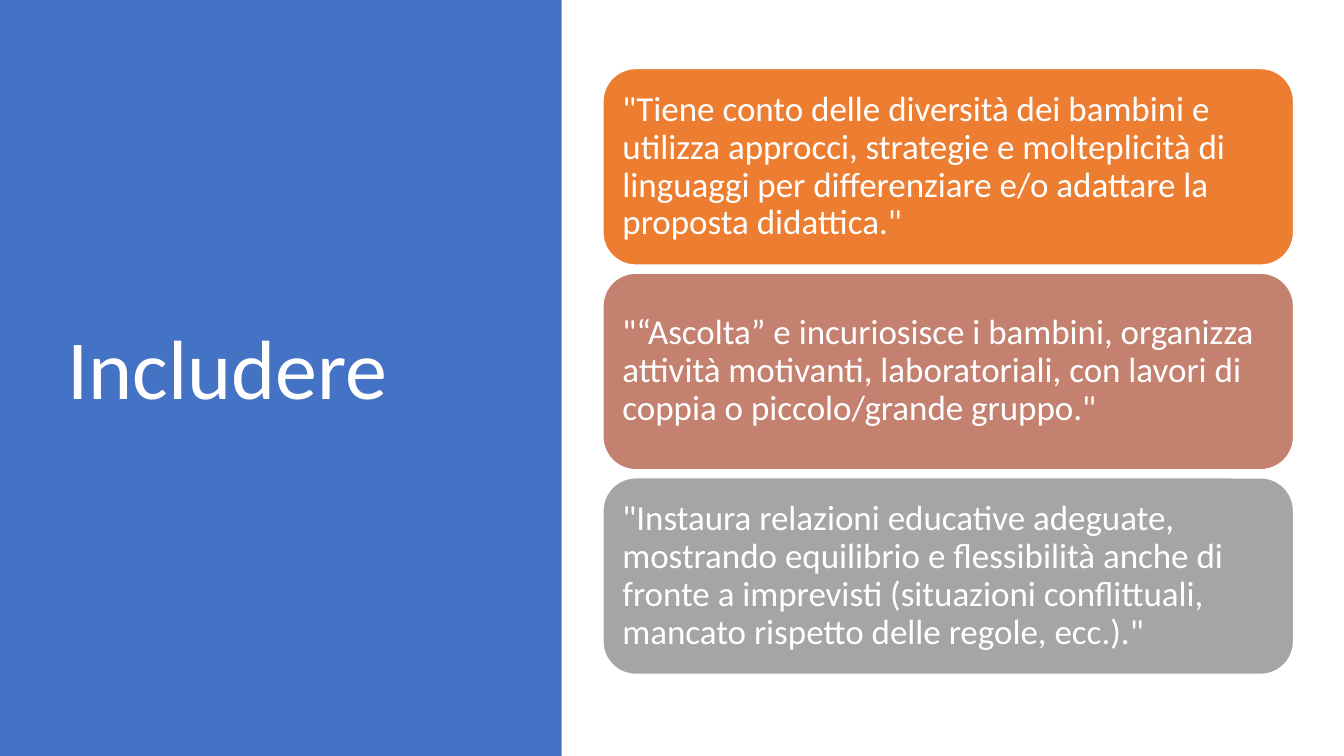
from dataclasses import dataclass

from pptx import Presentation
from pptx.dml.color import RGBColor
from pptx.enum.shapes import MSO_SHAPE
from pptx.enum.text import MSO_ANCHOR, MSO_AUTO_SIZE, PP_ALIGN
from pptx.util import Inches, Pt

TITLE = "Includere"
CARDS = [
    ("\"Tiene conto delle diversità dei bambini e utilizza approcci, strategie e "
     "molteplicità di linguaggi per differenziare e/o adattare la proposta didattica.\"", "ED7D31"),
    ("\"“Ascolta” e incuriosisce i bambini, organizza attività motivanti, "
     "laboratoriali, con lavori di coppia o piccolo/grande gruppo.\"", "C48170"),
    ("\"Instaura relazioni educative adeguate, mostrando equilibrio e flessibilità "
     "anche di fronte a imprevisti (situazioni conflittuali, mancato rispetto delle "
     "regole, ecc.).\"", "A5A5A5"),
]
SLIDE_W, SLIDE_H = 13.33, 7.5
PANEL_W = 5.57
TITLE_BOX = (0.57, 0.68, 4.16, 6.02)
CARD_X, CARD_Y, CARD_W, CARD_H, CARD_GAP = 5.98, 0.68, 6.85, 1.95, 0.08


@dataclass(frozen=True)
class Theme:
    font: str = "Calibri"
    panel: str = "4472C4"
    light: str = "FFFFFF"
    title_size: int = 60
    card_size: int = 25


THEME = Theme()


def rgb(code):
    return RGBColor.from_string(code)


def add_block(s, kind, box, fill):
    sp = s.shapes.add_shape(kind, *map(Inches, box))
    sp.shadow.inherit = False
    sp.fill.solid()
    sp.fill.fore_color.rgb = rgb(fill)
    sp.line.fill.background()
    return sp


def write(sp, text, size):
    tf = sp.text_frame
    tf.word_wrap = True
    tf.auto_size = MSO_AUTO_SIZE.NONE
    tf.vertical_anchor = MSO_ANCHOR.MIDDLE
    tf.margin_left = tf.margin_right = Inches(0.1)
    p = tf.paragraphs[0]
    p.alignment = PP_ALIGN.LEFT
    p.line_spacing = 0.9
    r = p.add_run()
    r.text = text
    r.font.name = THEME.font
    r.font.size = Pt(size)
    r.font.color.rgb = rgb(THEME.light)


def main():
    """Build the slide with its title panel and stacked cards."""
    prs = Presentation()
    prs.slide_width, prs.slide_height = Inches(SLIDE_W), Inches(SLIDE_H)
    s = prs.slides.add_slide(prs.slide_layouts[5])

    title = s.shapes.title
    title.left, title.top, title.width, title.height = map(Inches, TITLE_BOX)
    write(title, TITLE, THEME.title_size)
    panel = add_block(s, MSO_SHAPE.RECTANGLE, (0, 0, PANEL_W, SLIDE_H), THEME.panel)
    title.element.addprevious(panel.element)

    for i, (text, fill) in enumerate(CARDS):
        y = CARD_Y + i * (CARD_H + CARD_GAP)
        card = add_block(s, MSO_SHAPE.ROUNDED_RECTANGLE, (CARD_X, y, CARD_W, CARD_H), fill)
        card.line.color.rgb = rgb(THEME.light)
        card.line.width = Pt(1)
        write(card, text, THEME.card_size)

    prs.save("out.pptx")


if __name__ == "__main__":
    main()
